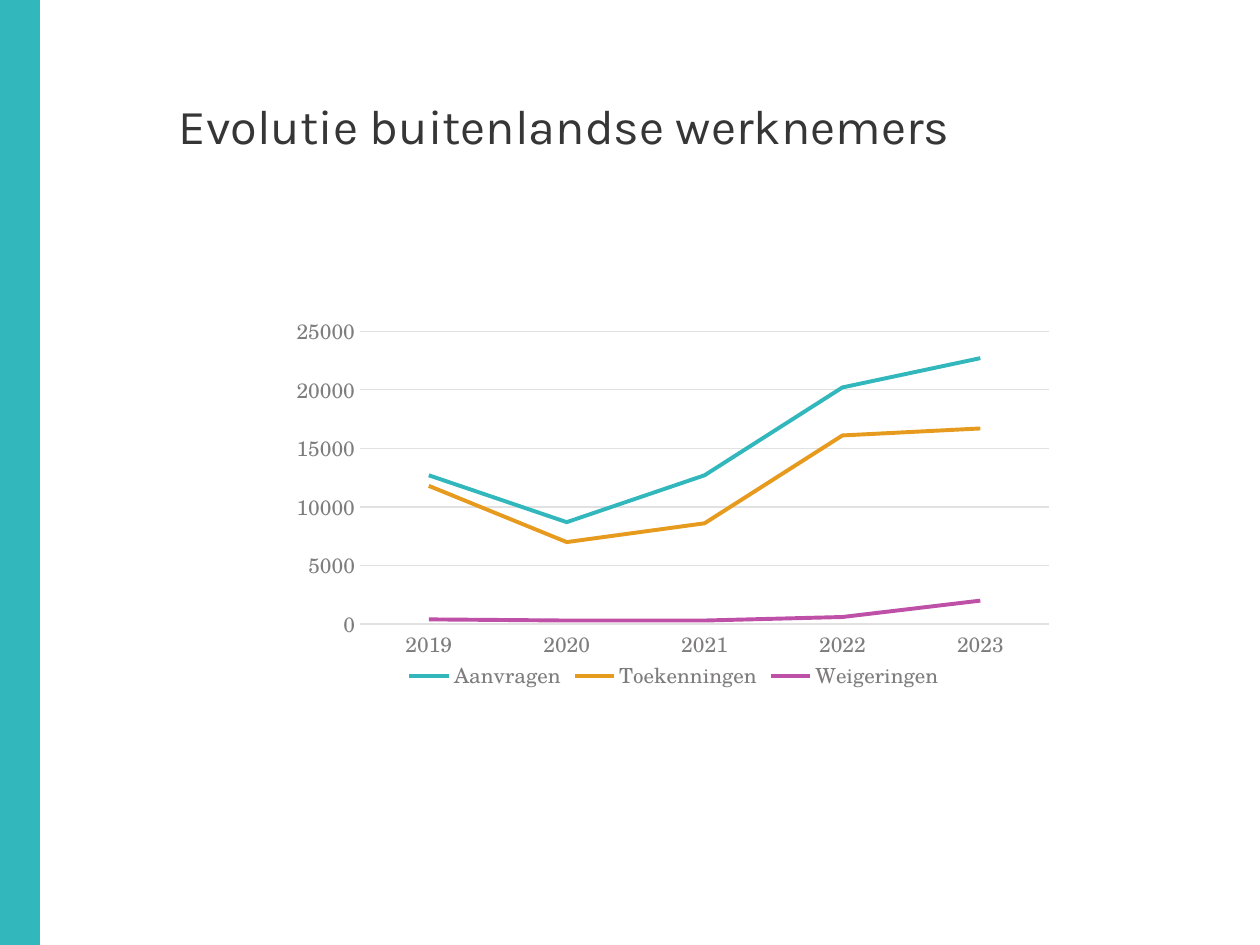
from lxml import etree
from pptx import Presentation
from pptx.chart.data import CategoryChartData
from pptx.dml.color import RGBColor
from pptx.enum.chart import XL_CHART_TYPE, XL_LEGEND_POSITION, XL_MARKER_STYLE, XL_TICK_MARK
from pptx.enum.shapes import MSO_SHAPE
from pptx.oxml.ns import qn
from pptx.util import Pt

LINE_CHART = XL_CHART_TYPE.LINE
BOTTOM = XL_LEGEND_POSITION.BOTTOM
NO_MARKER = XL_MARKER_STYLE.NONE
NO_TICK = XL_TICK_MARK.NONE
RECTANGLE = MSO_SHAPE.RECTANGLE

TEAL = RGBColor(0x31, 0xB7, 0xBC)
ORANGE = RGBColor(0xE6, 0x9B, 0x1E)
MAGENTA = RGBColor(0xBE, 0x50, 0xA7)
DARK = RGBColor(0x37, 0x36, 0x36)
GREY = RGBColor(0x7E, 0x7C, 0x7C)
GRID = RGBColor(0xE1, 0xE1, 0xE1)


def style_font(font, name, size, color):
    font.name = name
    font.size = Pt(size)
    font.color.rgb = color


def style_line(line, color, width):
    line.color.rgb = color
    line.width = Pt(width)


prs = Presentation()
prs.slide_width = Pt(720)
prs.slide_height = Pt(540)
slide = prs.slides.add_slide(prs.slide_layouts[6])

side_band = slide.shapes.add_shape(RECTANGLE, 0, 0, Pt(22.5), Pt(540))
side_band.shadow.inherit = False
side_band.fill.solid()
side_band.fill.fore_color.rgb = TEAL
style_line(side_band.line, TEAL, 1)

title = slide.shapes.add_textbox(Pt(102.25), Pt(59.75), Pt(584), Pt(88)).text_frame
title.word_wrap = True
title.margin_left = title.margin_top = title.margin_right = title.margin_bottom = 0
title.text = "Evolutie buitenlandse werknemers"
heading = title.paragraphs[0]
heading.line_spacing = Pt(28.5)
style_font(heading.runs[0].font, "Karla", 27.8, DARK)

permits = CategoryChartData()
permits.categories = ["2019", "2020", "2021", "2022", "2023"]
permits.add_series("Aanvragen", [12700, 8700, 12700, 20200, 22700])
permits.add_series("Toekenningen", [11800, 7000, 8600, 16100, 16700])
permits.add_series("Weigeringen", [400, 300, 300, 600, 2000])

chart = slide.shapes.add_chart(
    LINE_CHART, Pt(166.25), Pt(180.75), Pt(437.75), Pt(216.75), permits
).chart
chart.has_title = False
style_font(chart.font, "TeX Gyre Schola", 10, DARK)

chart.has_legend = True
chart.legend.position = BOTTOM
chart.legend.include_in_layout = False

years = chart.category_axis
counts = chart.value_axis
for part in (years.tick_labels, counts.tick_labels, chart.legend):
    style_font(part.font, "TeX Gyre Schola", 12, GREY)
for axis in (years, counts):
    axis.major_tick_mark = NO_TICK
    axis.minor_tick_mark = NO_TICK
style_line(years.format.line, GRID, 0.75)
counts.format.line.fill.background()
counts.has_major_gridlines = True
style_line(counts.major_gridlines.format.line, GRID, 0.75)
counts.minimum_scale = 0
counts.maximum_scale = 25000
counts.major_unit = 5000

for series, color in zip(chart.plots[0].series, (TEAL, ORANGE, MAGENTA)):
    series.smooth = False
    series.marker.style = NO_MARKER
    style_line(series.format.line, color, 2.25)

plot_area = chart.plots[0]._element.getparent()
for old_layout in plot_area.findall(qn("c:layout")):
    plot_area.remove(old_layout)
layout = etree.Element(qn("c:layout"))
plot_area.insert(0, layout)
manual = etree.SubElement(layout, qn("c:manualLayout"))
for tag, value in (
    ("layoutTarget", "inner"), ("xMode", "edge"), ("yMode", "edge"),
    ("x", "0.09"), ("y", "0.03"), ("w", "0.9"), ("h", "0.78"),
):
    etree.SubElement(manual, qn(f"c:{tag}")).set("val", value)

prs.save("out.pptx")
